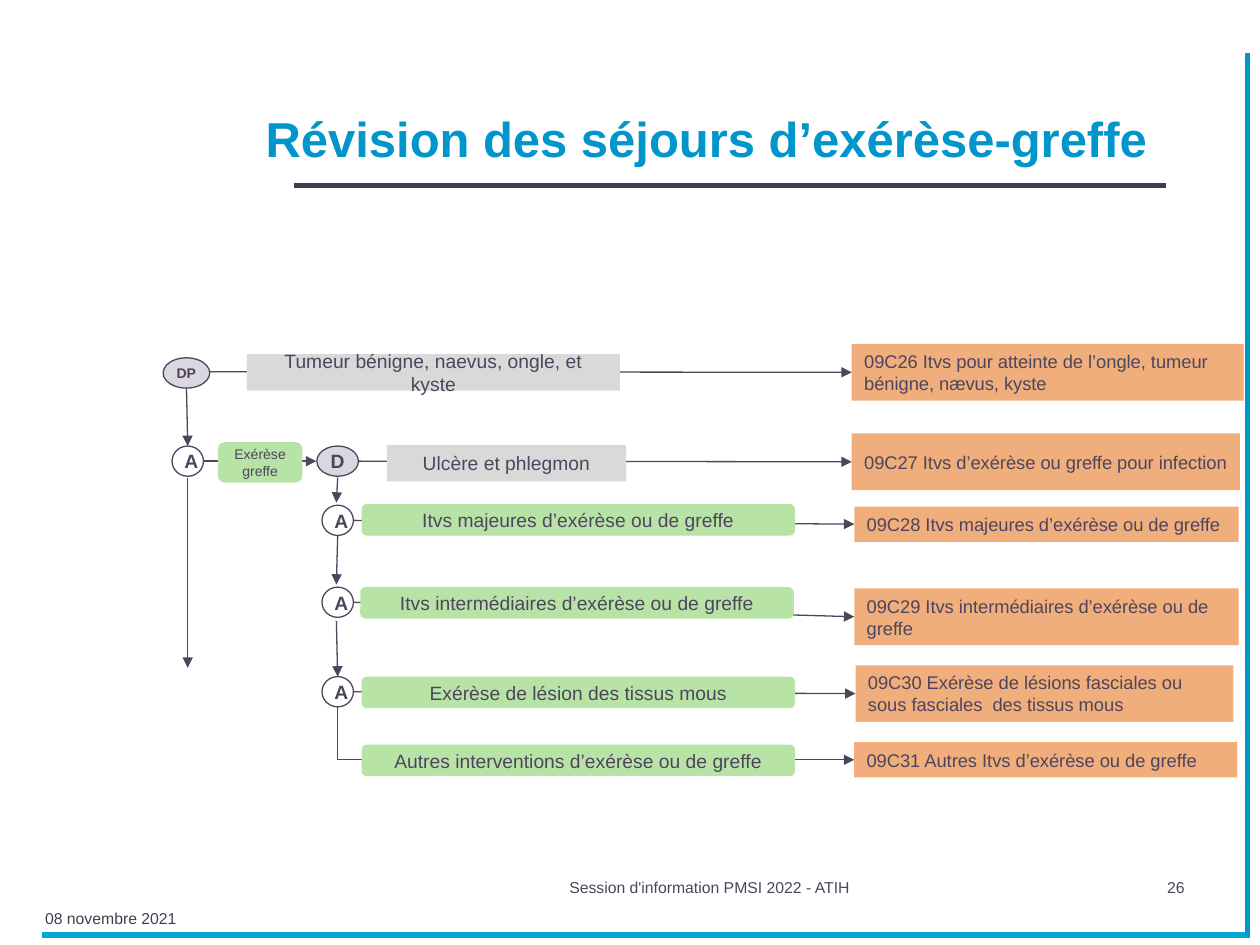
from dataclasses import dataclass
from typing import Optional

from lxml import etree
from pptx import Presentation
from pptx.dml.color import RGBColor
from pptx.enum import shapes, text
from pptx.oxml import ns
from pptx.util import Inches, Pt

SHAPE = shapes.MSO_SHAPE
ALIGN = text.PP_ALIGN
ANCHOR = text.MSO_ANCHOR


@dataclass(frozen=True)
class Theme:
    font: str = "Arial"
    ink: str = "4E455D"
    date: str = "433E4F"
    title: str = "0095CB"
    frame: str = "02A7D5"
    rule: str = "453B50"
    diagnosis: str = "D9D9D9"
    act: str = "B8E3A7"
    outcome: str = "EFAE7B"
    diagnosis_node: str = "DBD7E1"
    act_node: str = "FFFFFF"
    title_size: float = 28
    label_size: float = 11
    outcome_size: float = 10.5
    footer_size: float = 9
    small_size: float = 8
    thin: float = 0.75
    thick: float = 3.06


@dataclass(frozen=True)
class Box:
    label: str
    left: float
    top: float
    width: float
    height: float
    fill: Optional[str] = None
    size: float = 11
    kind: SHAPE = SHAPE.RECTANGLE
    align: ALIGN = ALIGN.CENTER
    anchor: ANCHOR = ANCHOR.MIDDLE
    color: str = "4E455D"
    bold: bool = False


@dataclass(frozen=True)
class Node:
    label: str
    cx: float
    cy: float
    width: float
    fill: str
    size: float = 11


@dataclass(frozen=True)
class Line:
    x1: float
    y1: float
    x2: float
    y2: float


T = Theme()


def outcome(label: str, left: float, top: float, width: float, height: float) -> Box:
    return Box(label, left, top, width, height, T.outcome, T.outcome_size, align=ALIGN.LEFT)


def act(label: str, left: float, top: float, width: float = 3.44,
        height: float = 0.25, size: float = T.label_size) -> Box:
    return Box(label, left, top, width, height, T.act, size, SHAPE.ROUNDED_RECTANGLE)


def footer(label: str, left: float, top: float, width: float, height: float,
           align: ALIGN = ALIGN.LEFT, color: str = T.ink) -> Box:
    return Box(label, left, top, width, height, None, T.footer_size,
               align=align, anchor=ANCHOR.TOP, color=color)


OUTCOMES = [
    outcome("09C26 Itvs pour atteinte de l’ongle, tumeur bénigne, nævus, kyste", 6.76, 2.73, 3.11, 0.45),
    outcome("09C27 Itvs d’exérèse ou greffe pour infection", 6.76, 3.44, 3.08, 0.45),
    outcome("09C28 Itvs majeures d’exérèse ou de greffe", 6.78, 4.02, 3.05, 0.28),
    outcome("09C29 Itvs intermédiaires d’exérèse ou de greffe", 6.78, 4.67, 3.05, 0.45),
    outcome("09C30 Exérèse de lésions fasciales ou sous fasciales  des tissus mous", 6.79, 5.28, 3, 0.45),
    outcome("09C31 Autres Itvs d’exérèse ou de greffe", 6.78, 5.89, 3.04, 0.28),
]
# Where the arrow to each of the first five outcomes starts
ARROW_STARTS = [(1.66, 2.95), (2.84, 3.66), (2.8, 4.13), (2.8, 4.78), (2.81, 5.49)]
STEPS = [
    Line(1.48, 3.07, 1.49, 3.54),
    Line(1.49, 3.79, 1.49, 5.3),
    Line(1.61, 3.66, 2.51, 3.66),
    Line(2.68, 3.79, 2.67, 3.99),
    Line(2.68, 4.25, 2.67, 4.64),
    Line(2.67, 4.93, 2.68, 5.37),
]
NODES = [
    Node("DP", 1.48, 2.96, 0.37, T.diagnosis_node, T.small_size),
    Node("A", 1.49, 3.66, 0.25, T.act_node),
    Node("D", 2.68, 3.66, 0.33, T.diagnosis_node),
    Node("A", 2.68, 4.13, 0.25, T.act_node),
    Node("A", 2.68, 4.78, 0.25, T.act_node),
    Node("A", 2.68, 5.49, 0.25, T.act_node),
]
CRITERIA = [
    Box("Tumeur bénigne, naevus, ongle, et kyste", 1.96, 2.81, 2.96, 0.29, T.diagnosis),
    act("Exérèse greffe", 1.73, 3.51, 0.67, 0.32, T.small_size),
    Box("Ulcère et phlegmon", 3.07, 3.53, 1.9, 0.29, T.diagnosis),
    act("Itvs majeures d’exérèse ou de greffe", 2.87, 4),
    act("Itvs intermédiaires d’exérèse ou de greffe", 2.86, 4.66),
    act("Exérèse de lésion des tissus mous", 2.87, 5.37),
    act("Autres interventions d’exérèse ou de greffe", 2.87, 5.91),
]
TEXTS = [
    Box("Révision des séjours d’exérèse-greffe", 2.01, 0.78, 7.4, 0.6, None, T.title_size,
        align=ALIGN.LEFT, anchor=ANCHOR.BOTTOM, color=T.title, bold=True),
    footer("26", 7.67, 6.92, 1.83, 0.44, ALIGN.RIGHT),
    footer("08 novembre 2021", 0.26, 7.16, 1.67, 0.29, color=T.date),
    footer("Session d'information PMSI 2022 - ATIH", 4.42, 6.92, 3.17, 0.5),
]


def draw_box(slide, box: Box):
    """Draw a filled shape, or a plain text box when there is no fill."""
    area = [Inches(v) for v in (box.left, box.top, box.width, box.height)]
    if box.fill:
        sp = slide.shapes.add_shape(box.kind, *area)
        sp.shadow.inherit = False
        sp.fill.solid()
        sp.fill.fore_color.rgb = RGBColor.from_string(box.fill)
        sp.line.fill.background()
    else:
        sp = slide.shapes.add_textbox(*area)
    tf = sp.text_frame
    tf.word_wrap = True
    tf.vertical_anchor = box.anchor
    p = tf.paragraphs[0]
    p.text = box.label
    p.alignment = box.align
    p.font.name = T.font
    p.font.size = Pt(box.size)
    p.font.bold = box.bold
    p.font.color.rgb = RGBColor.from_string(box.color)
    return sp


def draw_line(slide, line: Line, color: str = T.ink, weight: float = T.thin, arrow: bool = True):
    ends = [Inches(v) for v in (line.x1, line.y1, line.x2, line.y2)]
    cx = slide.shapes.add_connector(shapes.MSO_CONNECTOR.STRAIGHT, *ends)
    cx.line.color.rgb = RGBColor.from_string(color)
    cx.line.width = Pt(weight)
    if arrow:
        etree.SubElement(cx.line._get_or_add_ln(), ns.qn("a:tailEnd"), type="triangle")
    etree.SubElement(cx._element.spPr, ns.qn("a:effectLst"))
    return cx


def draw_elbow(slide, line: Line):
    """Draw an arrow that runs down, then right, as a turned one-bend connector."""
    cx = draw_line(slide, line)
    across, down = line.x2 - line.x1, line.y2 - line.y1
    cx.left = Inches((line.x1 + line.x2 - down) / 2)
    cx.top = Inches((line.y1 + line.y2 - across) / 2)
    cx.width, cx.height = Inches(down), Inches(across)
    xfrm = cx._element.spPr.find(ns.qn("a:xfrm"))
    xfrm.set("rot", str(270 * 60000))
    xfrm.set("flipH", "1")
    cx._element.spPr.find(ns.qn("a:prstGeom")).set("prst", "bentConnector2")


def draw_node(slide, node: Node):
    height, label_height = 0.24, 0.29
    left = node.cx - node.width / 2
    sp = draw_box(slide, Box("", left, node.cy - height / 2, node.width, height, node.fill, kind=SHAPE.OVAL))
    sp.line.color.rgb = RGBColor.from_string(T.ink)
    sp.line.width = Pt(T.thin)
    draw_box(slide, Box(node.label, left, node.cy - label_height / 2, node.width, label_height,
                        size=node.size, bold=True))


def main():
    prs = Presentation()
    prs.slide_width, prs.slide_height = Inches(10), Inches(7.5)
    slide = prs.slides.add_slide(prs.slide_layouts[6])

    draw_line(slide, Line(2.33, 1.47, 9.25, 1.47), T.rule, T.thick, arrow=False)
    draw_line(slide, Line(0.33, 7.42, 9.92, 7.42), T.frame, T.thick, arrow=False)
    draw_line(slide, Line(9.9, 7.42, 9.9, 0.42), T.title, T.thick, arrow=False)
    for box in TEXTS:
        draw_box(slide, box)

    targets = [draw_box(slide, box) for box in OUTCOMES]
    for (x, y), box, target in zip(ARROW_STARTS, OUTCOMES, targets):
        cx = draw_line(slide, Line(x, y, box.left, box.top + box.height / 2))
        cx.end_connect(target, 1)
    draw_elbow(slide, Line(2.68, 5.61, 6.78, 6.03))
    for step in STEPS:
        draw_line(slide, step)
    for node in NODES:
        draw_node(slide, node)
    for box in CRITERIA:
        draw_box(slide, box)
    prs.save("out.pptx")


if __name__ == "__main__":
    main()
